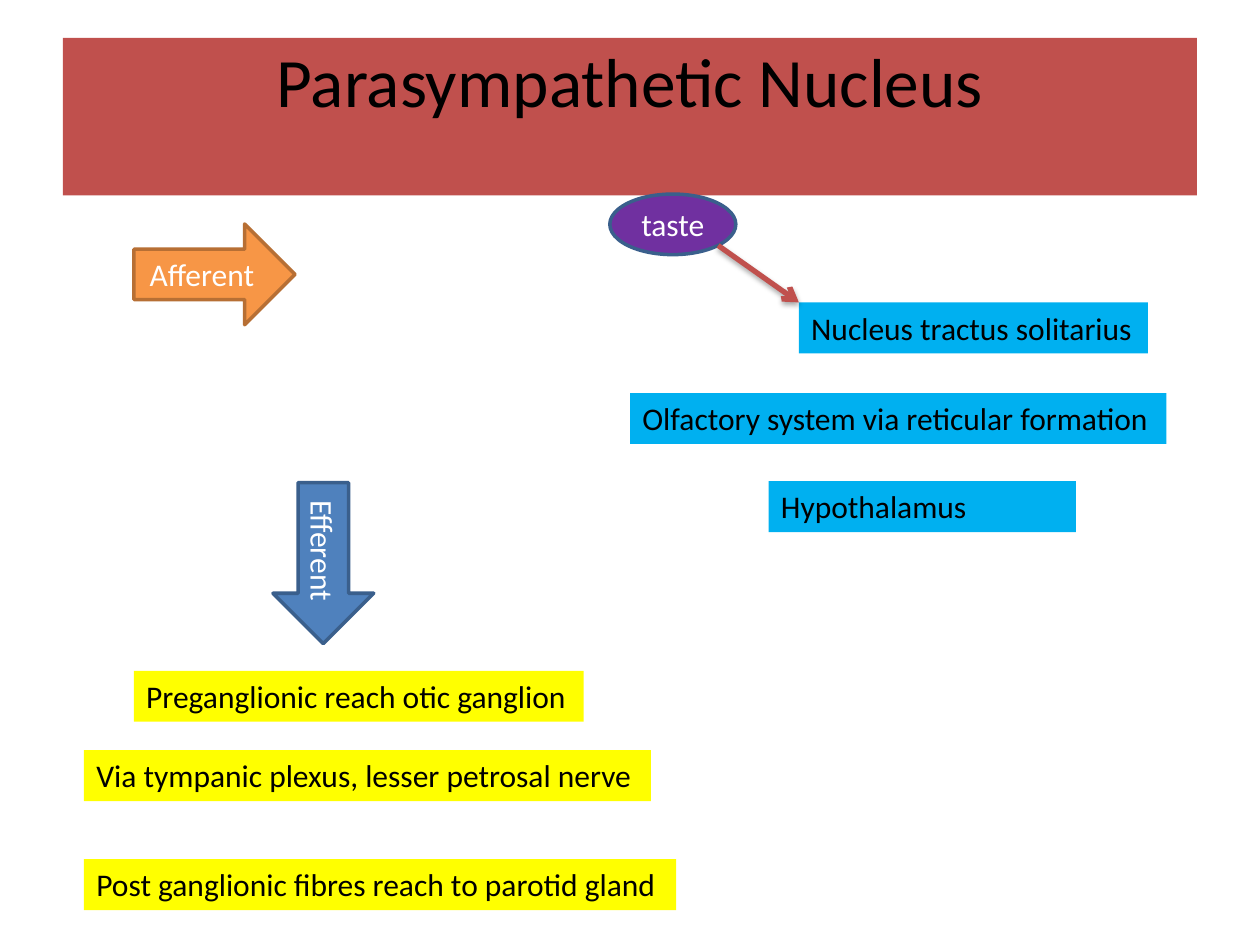
from lxml import etree
from pptx import Presentation
from pptx.dml.color import RGBColor
from pptx.enum.shapes import MSO_CONNECTOR, MSO_SHAPE
from pptx.enum.text import MSO_ANCHOR, PP_ALIGN
from pptx.oxml import parse_xml
from pptx.oxml.ns import nsdecls, qn
from pptx.util import Pt

LEFT, CENTER = PP_ALIGN.LEFT, PP_ALIGN.CENTER
TOP, MIDDLE = MSO_ANCHOR.TOP, MSO_ANCHOR.MIDDLE
RECT, OVAL = MSO_SHAPE.RECTANGLE, MSO_SHAPE.OVAL
RIGHT_ARROW, DOWN_ARROW = MSO_SHAPE.RIGHT_ARROW, MSO_SHAPE.DOWN_ARROW
STRAIGHT = MSO_CONNECTOR.STRAIGHT

BLACK = RGBColor(0x00, 0x00, 0x00)
WHITE = RGBColor(0xFF, 0xFF, 0xFF)
RED = RGBColor(0xC0, 0x50, 0x4D)
SKY = RGBColor(0x00, 0xB0, 0xF0)
YELLOW = RGBColor(0xFF, 0xFF, 0x00)
ORANGE = RGBColor(0xF7, 0x96, 0x46)
DARK_ORANGE = RGBColor(0xB7, 0x6F, 0x34)
BLUE = RGBColor(0x4F, 0x81, 0xBD)
DARK_BLUE = RGBColor(0x3A, 0x5F, 0x8C)
PURPLE = RGBColor(0x70, 0x30, 0xA0)

LABEL_HEIGHT = 29.1


def add_block(s, kind, box, text, fill, line=None, color=BLACK, size=18,
              align=CENTER, anchor=MIDDLE):
    """Add a filled shape with one line of text; box is left, top, width, height."""
    sp = s.shapes.add_shape(kind, *map(Pt, box))
    sp.shadow.inherit = False
    sp.fill.solid()
    sp.fill.fore_color.rgb = fill
    if line is None:
        sp.line.fill.background()
    else:
        sp.line.color.rgb = line
        sp.line.width = Pt(2)
    tf = sp.text_frame
    tf.word_wrap = True
    tf.vertical_anchor = anchor
    p = tf.paragraphs[0]
    p.text = text
    p.alignment = align
    p.font.name = "Calibri"
    p.font.size = Pt(size)
    p.font.color.rgb = color
    return sp


def add_title(s, box):
    sp = add_block(s, RECT, box, "Parasympathetic Nucleus", RED, size=39.6, anchor=TOP)
    sp.text_frame.margin_top = 0


def add_labels(s, labels, fill):
    """Add left-aligned labels, each given as left, top, width, text."""
    for left, top, width, text in labels:
        add_block(s, RECT, (left, top, width, LABEL_HEIGHT), text, fill,
                  align=LEFT, anchor=TOP)


def add_afferent_arrow(s, box):
    add_block(s, RIGHT_ARROW, box, "Afferent", ORANGE, DARK_ORANGE, WHITE)


def add_efferent_arrow(s, box):
    sp = add_block(s, DOWN_ARROW, box, "Efferent", BLUE, DARK_BLUE, WHITE)
    sp.text_frame._txBody.bodyPr.set("vert", "vert")


def add_taste(s, box, target):
    """Add the taste oval and an arrow from its lower right edge to target."""
    add_block(s, OVAL, box, "taste", PURPLE, DARK_BLUE, WHITE)
    left, top, width, height = box
    start = (left + 0.86 * width, top + 0.85 * height)
    cxn = s.shapes.add_connector(STRAIGHT, *map(Pt, start + target))
    cxn.line.color.rgb = RED
    cxn.line.width = Pt(3)
    etree.SubElement(cxn.line._get_or_add_ln(), qn("a:tailEnd"), type="arrow")
    cxn._element.spPr.append(parse_xml(
        f'<a:effectLst {nsdecls("a")}>'
        f'<a:outerShdw blurRad="{Pt(3.1)}" dist="{Pt(1.8)}" dir="5400000" rotWithShape="0">'
        '<a:srgbClr val="000000"><a:alpha val="35000"/></a:srgbClr>'
        '</a:outerShdw></a:effectLst>'))


def main():
    prs = Presentation()
    prs.slide_width, prs.slide_height = Pt(720), Pt(540)
    s = prs.slides.add_slide(prs.slide_layouts[6])

    add_labels(s, [
        (456.5, 172.8, 199.5, "Nucleus tractus solitarius"),
        (360, 224.6, 306.5, "Olfactory system via reticular formation"),
        (439.2, 275, 175.7, "Hypothalamus"),
    ], SKY)
    add_afferent_arrow(s, (76.6, 128, 92, 57.6))
    add_efferent_arrow(s, (156, 275.8, 57.6, 92))
    add_labels(s, [
        (76.5, 383.3, 257, "Preganglionic reach otic ganglion"),
        (48, 428.7, 324, "Via tympanic plexus, lesser petrosal nerve"),
        (48, 491, 338.4, "Post ganglionic fibres reach to parotid gland"),
    ], YELLOW)
    add_title(s, (36, 21.6, 648, 90))
    add_taste(s, (348.5, 110.9, 72, 34.6), target=(456.5, 172.8))

    prs.save("out.pptx")


if __name__ == "__main__":
    main()
